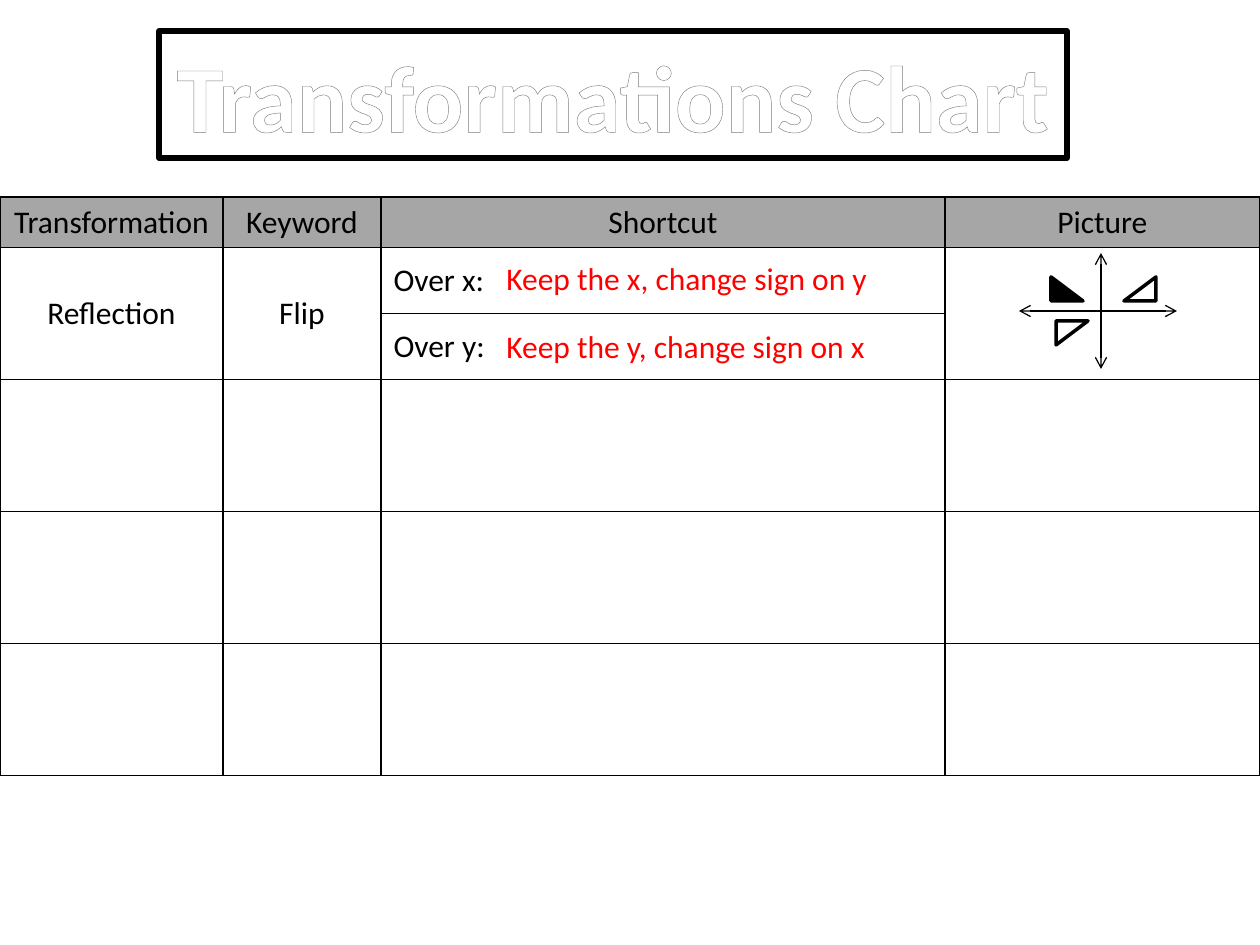
from lxml import etree
from pptx import Presentation, util as u
from pptx.dml.color import RGBColor
from pptx.enum import shapes, text
from pptx.oxml import parse_xml
from pptx.oxml.ns import nsdecls, qn

SCALE = 914400 / 126
FONT = "Calibri"
BLACK, WHITE, RED, GREY = "000000", "FFFFFF", "FF0000", "A6A6A6"

COLUMNS = [223, 158, 564, 315]
ROWS = [50, 66, 66, 132, 132, 132]
HEADINGS = ["Transformation", "Keyword", "Shortcut", "Picture"]
TITLE_STOPS = [(0, WHITE), (9, WHITE), (50, "7F7F7F"), (79, WHITE), (100, WHITE)]


def px(length):
    return u.Emu(round(length * SCALE))


def rgb(colour):
    return RGBColor.from_string(colour)


def add_run(paragraph, words, size=18, colour=BLACK):
    run = paragraph.add_run()
    run.text = words
    run.font.size = u.Pt(size)
    run.font.name = FONT
    run.font.color.rgb = rgb(colour)
    return run


def set_line(line, colour, width):
    line.color.rgb = rgb(colour)
    line.width = u.Pt(width)


def style_title_run(run):
    """Give the letters a gradient fill and a thin outline."""
    run.font.bold = True
    properties = run.font.fill._xPr
    properties.remove(properties.find(qn("a:solidFill")))
    stops = "".join(
        f'<a:gs pos="{place * 1000}"><a:srgbClr val="{colour}"/></a:gs>'
        for place, colour in TITLE_STOPS)
    gradient = parse_xml(
        f'<a:gradFill {nsdecls("a")}><a:gsLst>{stops}</a:gsLst>'
        '<a:lin ang="5400000"/></a:gradFill>')
    outline = parse_xml(
        f'<a:ln {nsdecls("a")} w="{u.Pt(0.83)}"><a:solidFill>'
        '<a:srgbClr val="7D7D7D"/></a:solidFill></a:ln>')
    properties.insert(0, outline)
    properties.insert(1, gradient)


def add_title(slide, words):
    title = slide.shapes.title
    title.left, title.top, title.width, title.height = map(px, (159, 31, 908, 127))
    set_line(title.line, BLACK, 3)
    frame = title.text_frame
    frame.word_wrap = False
    frame.auto_size = text.MSO_AUTO_SIZE.SHAPE_TO_FIT_TEXT
    paragraph = frame.paragraphs[0]
    paragraph.alignment = text.PP_ALIGN.CENTER
    style_title_run(add_run(paragraph, words, 54))


def add_borders(cell):
    properties = cell._tc.get_or_add_tcPr()
    for side in ("lnL", "lnR", "lnT", "lnB"):
        properties.append(parse_xml(
            f'<a:{side} {nsdecls("a")} w="{u.Pt(1)}"><a:solidFill>'
            f'<a:srgbClr val="{BLACK}"/></a:solidFill></a:{side}>'))


def write_cell(cell, words, centred=True):
    paragraph = cell.text_frame.paragraphs[0]
    if centred:
        paragraph.alignment = text.PP_ALIGN.CENTER
    add_run(paragraph, words)


def add_chart_table(slide):
    table = slide.shapes.add_table(
        len(ROWS), len(COLUMNS), px(0), px(197), px(sum(COLUMNS)), px(sum(ROWS))).table
    table.first_row = table.horz_banding = False
    for column, width in zip(table.columns, COLUMNS):
        column.width = px(width)
    for row, height in zip(table.rows, ROWS):
        row.height = px(height)

    for cell in table.iter_cells():
        add_borders(cell)
        cell.fill.background()
        cell.vertical_anchor = text.MSO_ANCHOR.MIDDLE

    # Reflection takes two rows, split only in the shortcut column
    for column in (0, 1, 3):
        table.cell(1, column).merge(table.cell(2, column))

    for column, heading in enumerate(HEADINGS):
        cell = table.cell(0, column)
        cell.fill.solid()
        cell.fill.fore_color.rgb = rgb(GREY)
        write_cell(cell, heading)
    write_cell(table.cell(1, 0), "Reflection")
    write_cell(table.cell(1, 1), "Flip")
    write_cell(table.cell(1, 2), "Over x:", centred=False)
    write_cell(table.cell(2, 2), "Over y:", centred=False)


def add_axis(group, x1, y1, x2, y2):
    axis = group.shapes.add_connector(
        shapes.MSO_CONNECTOR.STRAIGHT, *map(px, (x1, y1, x2, y2)))
    set_line(axis.line, BLACK, 0.75)
    line = axis.line._get_or_add_ln()
    for end in ("a:headEnd", "a:tailEnd"):
        etree.SubElement(line, qn(end), type="arrow")
    etree.SubElement(axis.element.spPr, qn("a:effectLst"))


def add_triangle(group, x, y, fill, flip=None):
    triangle = group.shapes.add_shape(
        shapes.MSO_SHAPE.RIGHT_TRIANGLE, *map(px, (x, y, 32, 24)))
    triangle.shadow.inherit = False
    triangle.fill.solid()
    triangle.fill.fore_color.rgb = rgb(fill)
    set_line(triangle.line, BLACK, 2)
    if flip:
        triangle.element.spPr.get_or_add_xfrm().set(flip, "1")


def add_reflection_sketch(slide):
    sketch = slide.shapes.add_group_shape()
    add_axis(sketch, 1101, 253, 1101, 369)
    add_axis(sketch, 1019, 311, 1177, 311)
    add_triangle(sketch, 1051, 277, BLACK)
    add_triangle(sketch, 1056, 321, WHITE, "flipV")
    add_triangle(sketch, 1124, 277, WHITE, "flipH")


def add_rule(slide, y, words):
    rule = slide.shapes.add_textbox(*map(px, (494, y, 420, 51)))
    frame = rule.text_frame
    frame.word_wrap = True
    frame.auto_size = text.MSO_AUTO_SIZE.SHAPE_TO_FIT_TEXT
    add_run(frame.paragraphs[0], words, colour=RED)


def main():
    deck = Presentation()
    deck.slide_width, deck.slide_height = px(1260), px(945)
    slide = deck.slides.add_slide(deck.slide_layouts[5])

    # Heading and table
    add_title(slide, "Transformations Chart")
    add_chart_table(slide)

    # Reflection example
    add_reflection_sketch(slide)
    add_rule(slide, 321, "Keep the y, change sign on x")
    add_rule(slide, 253, "Keep the x, change sign on y")

    deck.save("out.pptx")


if __name__ == "__main__":
    main()
